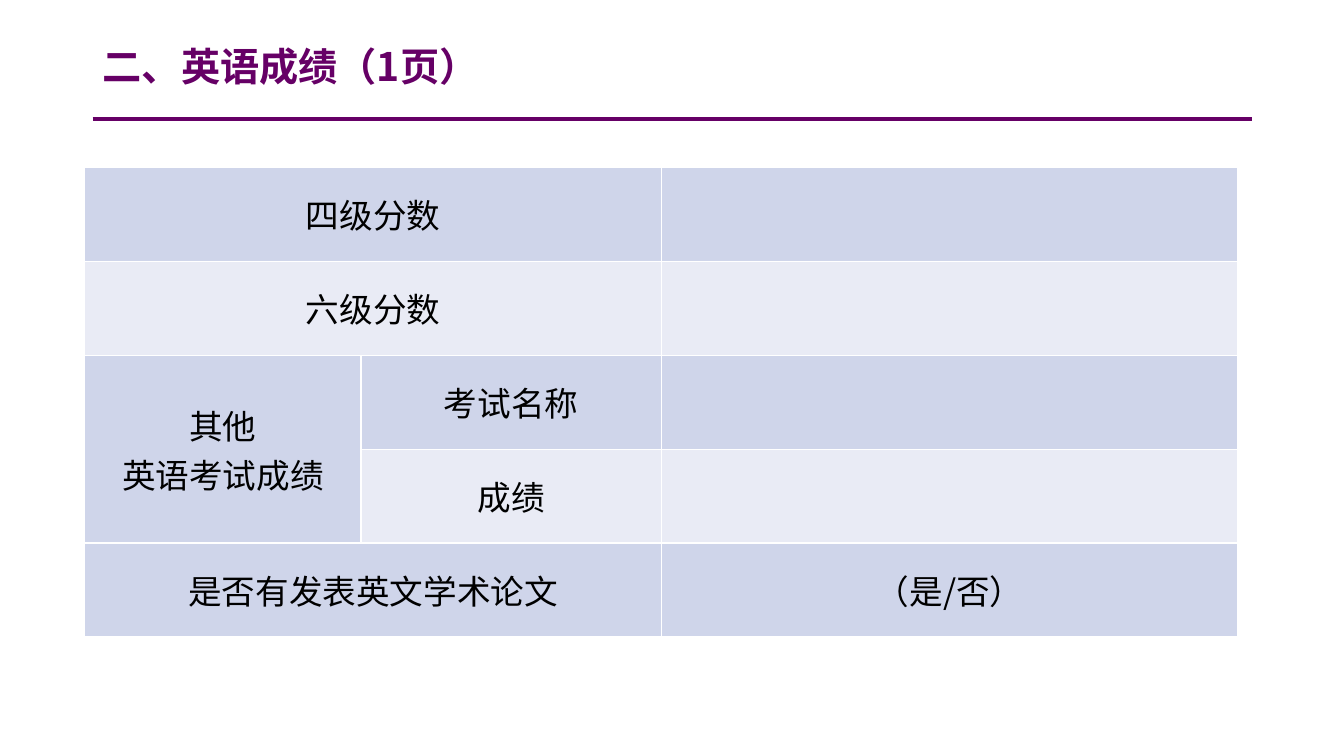
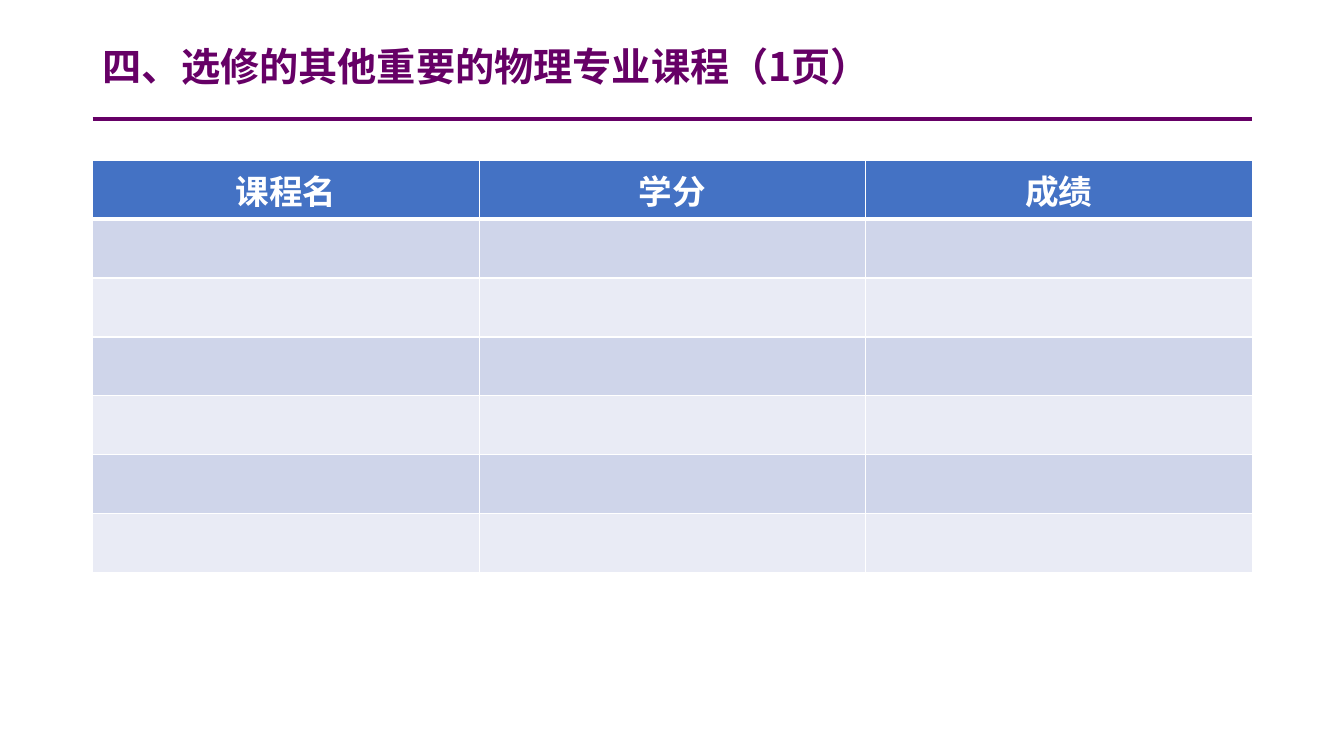
from lxml import etree
from pptx import Presentation
from pptx.dml.color import RGBColor
from pptx.enum import shapes, text
from pptx.oxml import ns
from pptx.util import Inches, Pt

FONT = "Noto Sans CJK SC"
PURPLE, BLUE, WHITE, BLACK = "660066", "4472C4", "FFFFFF", "000000"
BANDS = ("CFD5EA", "E9EBF5")
LEFT, CONTENT_WIDTH = 0.92, 11.5
TITLE_TOP, TITLE_HEIGHT, RULE_Y = 0.42, 0.53, 1.18


def rgb(value):
    return RGBColor.from_string(value)


def add_run(paragraph, words, size, color, bold=False):
    run = paragraph.add_run()
    run.text = words
    run.font.size = Pt(size)
    run.font.bold = bold
    run.font.name = FONT
    run.font.color.rgb = rgb(color)
    east_asian = etree.SubElement(run.font.fill._xPr, ns.qn("a:ea"))
    east_asian.set("typeface", FONT)


# Shared layout and title
def add_rule(slide, layout):
    """Draw the line under the title and move it to the shared layout."""
    rule = slide.shapes.add_connector(
        shapes.MSO_CONNECTOR.STRAIGHT, Inches(LEFT), Inches(RULE_Y),
        Inches(LEFT + CONTENT_WIDTH), Inches(RULE_Y))
    rule.line.color.rgb = rgb(PURPLE)
    rule.line.width = Pt(3)
    etree.SubElement(rule.element.spPr, ns.qn("a:effectLst"))
    layout.shapes.element.append(rule.element)


def add_titled_slide(prs, layout, heading):
    slide = prs.slides.add_slide(layout)
    title = slide.shapes.title
    title.left, title.top = Inches(LEFT), Inches(TITLE_TOP)
    title.width, title.height = Inches(CONTENT_WIDTH), Inches(TITLE_HEIGHT)
    frame = title.text_frame
    frame.word_wrap = True
    frame.auto_size = text.MSO_AUTO_SIZE.SHAPE_TO_FIT_TEXT
    frame.vertical_anchor = text.MSO_ANCHOR.MIDDLE
    paragraph = frame.paragraphs[0]
    paragraph.alignment = text.PP_ALIGN.LEFT
    paragraph.line_spacing = 0.9
    add_run(paragraph, heading, 28, PURPLE, bold=True)
    return slide


# Tables
def set_borders(cell, bottom=1):
    properties = cell._tc.get_or_add_tcPr()
    for index, (side, width) in enumerate(zip("LRTB", (1, 1, 1, bottom))):
        border = etree.Element(ns.qn(f"a:ln{side}"), w=str(Pt(width)))
        fill = etree.SubElement(border, ns.qn("a:solidFill"))
        etree.SubElement(fill, ns.qn("a:srgbClr"), val=WHITE)
        properties.insert(index, border)


def fill_cell(cell, words, fill, color, bold, bottom):
    cell.fill.solid()
    cell.fill.fore_color.rgb = rgb(fill)
    set_borders(cell, bottom)
    cell.vertical_anchor = text.MSO_ANCHOR.MIDDLE
    if not words:
        return
    for index, line in enumerate(words.split("\n")):
        frame = cell.text_frame
        paragraph = frame.add_paragraph() if index else frame.paragraphs[0]
        paragraph.alignment = text.PP_ALIGN.CENTER
        add_run(paragraph, line, 24, color, bold)


def add_grid(slide, left, top, widths, height, rows, header=False, merges=()):
    """Add a banded table; merges hold pairs of (row, column) corners."""
    table = slide.shapes.add_table(
        len(rows), len(widths), Inches(left), Inches(top),
        Inches(sum(widths)), Inches(height)).table
    table.first_row = header
    table.horz_banding = False
    for column, width in zip(table.columns, widths):
        column.width = Inches(width)
    for r, row in enumerate(rows):
        table.rows[r].height = Inches(height / len(rows))
        is_header = header and r == 0
        fill = BLUE if is_header else BANDS[(r - header) % 2]
        color = WHITE if is_header else BLACK
        for c, words in enumerate(row):
            fill_cell(table.cell(r, c), words, fill, color, is_header,
                      bottom=3 if is_header else 1)
    for first, last in merges:
        table.cell(*first).merge(table.cell(*last))


def main():
    prs = Presentation()
    prs.slide_width, prs.slide_height = Inches(13.33), Inches(7.5)
    layout = prs.slide_layouts.get_by_name("Title Only")

    # English scores
    english = add_titled_slide(prs, layout, "二、英语成绩（1页）")
    add_rule(english, layout)
    scores = [
        ("四级分数", "", ""),
        ("六级分数", "", ""),
        ("其他\n英语考试成绩", "考试名称", ""),
        ("", "成绩", ""),
        ("是否有发表英文学术论文", "", "（是/否）"),
    ]
    merges = [((r, 0), (r, 1)) for r in (0, 1, 4)] + [((2, 0), (3, 0))]
    add_grid(english, 0.84, 1.66, (2.74, 2.98, 5.72), 4.66, scores,
             merges=merges)

    # Elective physics courses
    courses = add_titled_slide(prs, layout, "四、选修的其他重要的物理专业课程（1页）")
    course_rows = [("课程名", "学分", "成绩")] + [("",) * 3] * 6
    add_grid(courses, LEFT, 1.59, [CONTENT_WIDTH / 3] * 3, 4.09, course_rows,
             header=True)

    prs.save("out.pptx")


if __name__ == "__main__":
    main()
